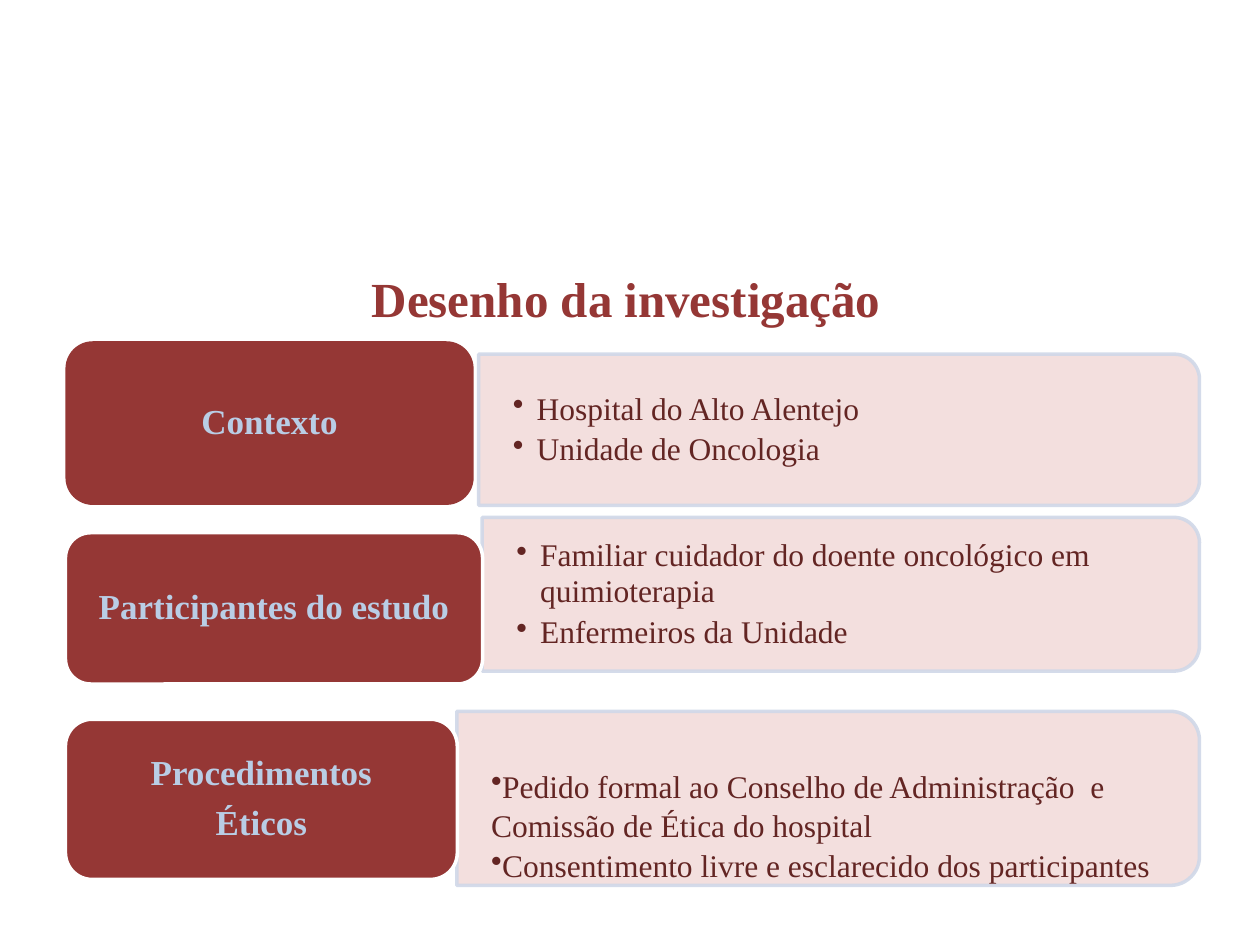
from lxml import etree
from pptx import Presentation
from pptx.dml.color import RGBColor
from pptx.enum.shapes import MSO_SHAPE
from pptx.enum.text import MSO_ANCHOR, PP_ALIGN
from pptx.oxml.ns import qn
from pptx.util import Cm, Pt

ROUNDED = MSO_SHAPE.ROUNDED_RECTANGLE
TWO_ROUNDED = MSO_SHAPE.ROUND_2_SAME_RECTANGLE
MIDDLE, CENTER, LEFT = MSO_ANCHOR.MIDDLE, PP_ALIGN.CENTER, PP_ALIGN.LEFT

WHITE = RGBColor(0xFF, 0xFF, 0xFF)
RED = RGBColor(0x95, 0x37, 0x35)
DARK_RED = RGBColor(0x63, 0x25, 0x23)
PINK = RGBColor(0xF2, 0xDC, 0xDB)
PALE_BLUE = RGBColor(0xD0, 0xD8, 0xE8)
LIGHT_BLUE = RGBColor(0xB9, 0xCD, 0xE5)

TITLE = dict(size=Pt(28), bold=True, color=RED)
LABEL = dict(size=Pt(20), bold=True, color=LIGHT_BLUE)
BODY = dict(size=Pt(18), bold=False, color=DARK_RED)

LABEL_LEFT, PANEL_RIGHT = 1.32, 24.18

# Label and panel boxes in cm; "push" moves the panel text down
ROWS = [
    dict(label=["Contexto"], label_box=(6.88, 8.23, 3.3), outlined=False,
         panel_box=(9.65, 7.14, 3.05), push=0, hang=0.48, spacing=0.95, after=2.7,
         items=["Hospital do Alto Alentejo", "Unidade de Oncologia"]),
    dict(label=["Participantes do estudo"], label_box=(10.74, 8.41, 3.05), outlined=True,
         panel_box=(9.72, 10.43, 3.1), push=0, hang=0.48, spacing=0.95, after=2.7,
         items=["Familiar cuidador do doente oncológico em quimioterapia",
                "Enfermeiros da Unidade"]),
    dict(label=["Procedimentos", "Éticos"], label_box=(14.5, 7.9, 3.23), outlined=True,
         panel_box=(9.21, 14.34, 3.51), push=1.04, hang=0, spacing=1.05, after=0,
         items=["Pedido formal ao Conselho de Administração  e Comissão de Ética do hospital",
                "Consentimento livre e esclarecido dos participantes"]),
]


def write(tf, lines, style, align, spacing=1.0, after=0, hang=None):
    """Fill a text frame; a hang value (cm) turns the lines into bullets."""
    tf.word_wrap = True
    tf.vertical_anchor = MIDDLE
    for i, line in enumerate(lines):
        p = tf.paragraphs[0] if i == 0 else tf.add_paragraph()
        p.alignment, p.line_spacing = align, spacing
        p.space_before, p.space_after = Pt(0), Pt(after)
        if hang is not None:
            pPr = p._p.get_or_add_pPr()
            pPr.set("marL", str(Cm(hang)))
            pPr.set("indent", str(-Cm(hang)))
            etree.SubElement(pPr, qn("a:buChar")).set("char", "•")
        r = p.add_run()
        r.text = line
        r.font.name = "Times New Roman"
        r.font.color.rgb = style["color"]
        for name in ("size", "bold"):
            setattr(r.font, name, style[name])


def set_opacity(fill, percent):
    color = fill._xPr.find(".//" + qn("a:srgbClr"))
    etree.SubElement(color, qn("a:alpha")).set("val", str(percent * 1000))


prs = Presentation()
prs.slide_width, prs.slide_height = Cm(25.4), Cm(19.05)
s = prs.slides.add_slide(prs.slide_layouts[5])

title = s.shapes.title
title.left, title.top, title.width, title.height = Cm(1.09), Cm(5.13), Cm(23.06), Cm(1.75)
write(title.text_frame, ["Desenho da investigação"], TITLE, CENTER)

for row in ROWS:
    # Panel: a quarter turn puts the two rounded corners on the right
    left, top, height = row["panel_box"]
    width = PANEL_RIGHT - left
    shift = (width - height) / 2
    sp = s.shapes.add_shape(TWO_ROUNDED, Cm(left + shift), Cm(top - shift),
                            Cm(height), Cm(width))
    sp.rotation = 90
    sp.shadow.inherit = False
    sp.fill.solid()
    sp.fill.fore_color.rgb = PINK
    sp.line.width = Pt(2)
    sp.line.color.rgb = PALE_BLUE
    for fill in (sp.fill, sp.line.fill):
        set_opacity(fill, 90)

    tf = s.shapes.add_textbox(Cm(left), Cm(top), Cm(width), Cm(height)).text_frame
    margins = dict(margin_left=0.69, margin_right=0.84, margin_top=row["push"], margin_bottom=0)
    for name, value in margins.items():
        setattr(tf, name, Cm(value))
    write(tf, row["items"], BODY, LEFT, row["spacing"], row["after"], row["hang"])

    top, width, height = row["label_box"]
    sp = s.shapes.add_shape(ROUNDED, Cm(LABEL_LEFT), Cm(top), Cm(width), Cm(height))
    sp.shadow.inherit = False
    sp.fill.solid()
    sp.fill.fore_color.rgb = RED
    if row["outlined"]:
        sp.line.width = Pt(2)
        sp.line.color.rgb = WHITE
    else:
        sp.line.fill.background()
    write(sp.text_frame, row["label"], LABEL, CENTER, 0.9, 7)

prs.save("out.pptx")
